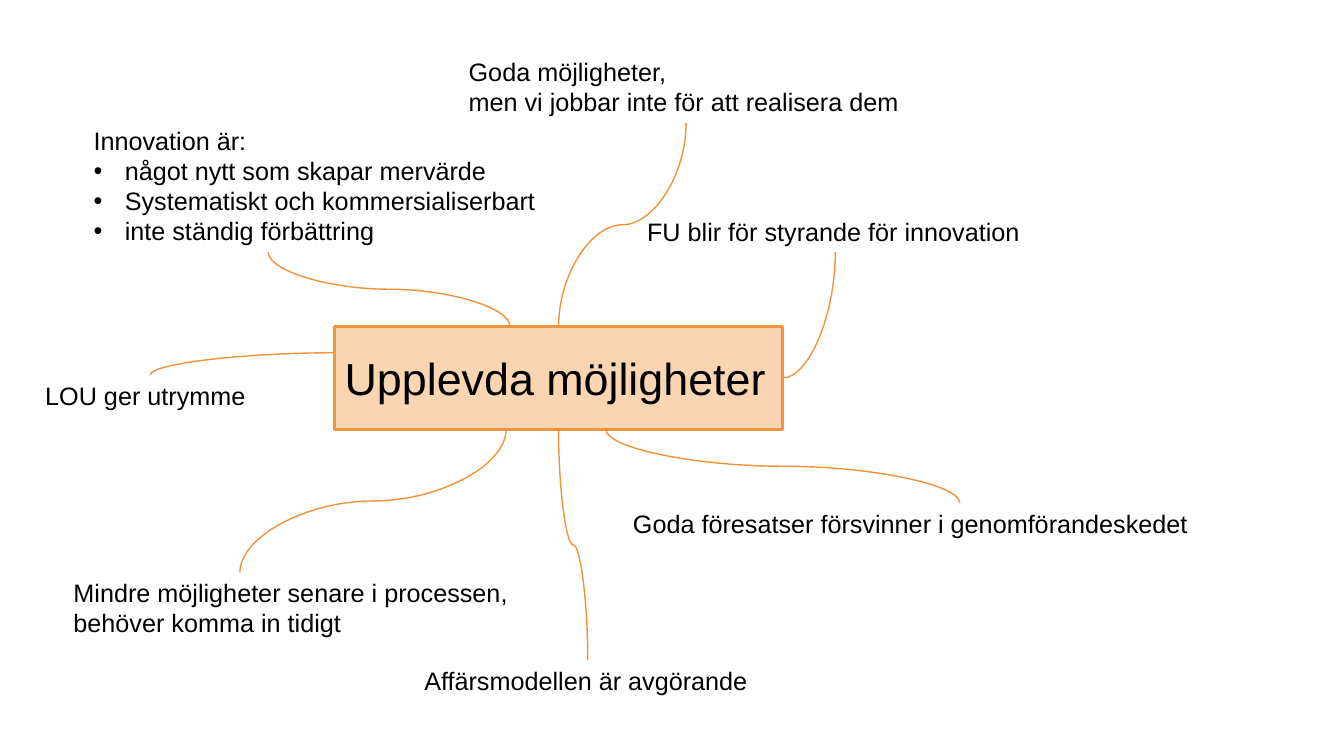
from dataclasses import dataclass

from pptx import Presentation
from pptx.dml.color import RGBColor
from pptx.enum import shapes, text
from pptx.oxml import ns, xmlchemy
from pptx.util import Inches, Pt


@dataclass(frozen=True)
class Theme:
    font: str = "Arial"
    ink: RGBColor = RGBColor(0x00, 0x00, 0x00)
    hub_fill: RGBColor = RGBColor(0xFA, 0xD5, 0xB2)
    hub_line: RGBColor = RGBColor(0xF3, 0x95, 0x3F)
    branch_line: RGBColor = RGBColor(0xF2, 0x92, 0x39)
    hub_size: Pt = Pt(32)
    label_size: Pt = Pt(18)
    hub_weight: Pt = Pt(2.25)
    branch_weight: Pt = Pt(1)


THEME = Theme()
BULLET = "• "
HUB_BOX = (3.32, 3.24, 4.44, 1.02)
HUB_LEFT, HUB_TOP, HUB_WIDTH, HUB_HEIGHT = HUB_BOX
HUB_RIGHT, HUB_BOTTOM = HUB_LEFT + HUB_WIDTH, HUB_TOP + HUB_HEIGHT
HUB_CENTER = HUB_LEFT + HUB_WIDTH / 2

# Each branch: label lines, label box, branch start x (None for label centre), point on the hub
BRANCHES = [
    (["Innovation är:", BULLET + "något nytt som skapar mervärde",
      BULLET + "Systematiskt och kommersialiserbart", BULLET + "inte ständig förbättring"],
     (0.83, 1.19, 4.63, 1.31), 2.66, (5.06, HUB_TOP)),
    (["Mindre möjligheter senare i processen,\vbehöver komma in tidigt"],
     (0.63, 5.68, 4.55, 0.71), 2.38, (5.02, HUB_BOTTOM)),
    (["Affärsmodellen är avgörande"], (4.11, 6.55, 3.44, 0.4), None, (HUB_CENTER, HUB_BOTTOM)),
    (["LOU ger utrymme"], (0.35, 3.72, 2.28, 0.4), None, (HUB_LEFT, 3.5)),
    (["Goda föresatser försvinner i genomförandeskedet"],
     (6.18, 4.99, 5.76, 0.4), 9.52, (6.01, HUB_BOTTOM)),
    (["FU blir för styrande för innovation"],
     (6.32, 2.1, 3.93, 0.4), None, (HUB_RIGHT, HUB_TOP + HUB_HEIGHT / 2)),
    (["Goda möjligheter,", "men vi jobbar inte för att realisera dem"],
     (4.55, 0.51, 4.51, 0.71), None, (HUB_CENTER, HUB_TOP)),
]


def style_paragraph(paragraph, size):
    paragraph.alignment = text.PP_ALIGN.LEFT
    paragraph.font.name = THEME.font
    paragraph.font.size = size
    paragraph.font.color.rgb = THEME.ink


def add_bullet(paragraph):
    properties = paragraph._p.get_or_add_pPr()
    properties.set("marL", str(Inches(0.31)))
    properties.set("indent", str(Inches(-0.31)))
    for tag, name, value in (("a:buFont", "typeface", THEME.font), ("a:buChar", "char", BULLET.strip())):
        element = xmlchemy.OxmlElement(tag)
        element.set(name, value)
        properties.append(element)


def add_hub(slide, box, title):
    hub = slide.shapes.add_shape(shapes.MSO_SHAPE.RECTANGLE, *map(Inches, box))
    hub.shadow.inherit = False
    hub.fill.solid()
    hub.fill.fore_color.rgb = THEME.hub_fill
    hub.line.color.rgb = THEME.hub_line
    hub.line.width = THEME.hub_weight
    frame = hub.text_frame
    frame.vertical_anchor = text.MSO_ANCHOR.MIDDLE
    frame.text = title
    style_paragraph(frame.paragraphs[0], THEME.hub_size)


def add_label(slide, box, lines):
    frame = slide.shapes.add_textbox(*map(Inches, box)).text_frame
    frame.word_wrap = False
    frame.auto_size = text.MSO_AUTO_SIZE.SHAPE_TO_FIT_TEXT
    frame.text = "\n".join(line.removeprefix(BULLET) for line in lines)
    for paragraph, line in zip(frame.paragraphs, lines):
        if line.startswith(BULLET):
            add_bullet(paragraph)
        style_paragraph(paragraph, THEME.label_size)


def add_curve(slide, start, end, preset):
    (start_x, start_y), (end_x, end_y) = start, end
    center_x, center_y = (start_x + end_x) / 2, (start_y + end_y) / 2
    half_x, half_y = (end_x - start_x) / 2, (end_y - start_y) / 2
    corners = (center_x - half_y, center_y + half_x, center_x + half_y, center_y - half_x)
    curve = slide.shapes.add_connector(shapes.MSO_CONNECTOR.CURVE, *map(Inches, corners))
    curve.line.color.rgb = THEME.branch_line
    curve.line.width = THEME.branch_weight
    properties = curve._element.spPr
    properties.find(ns.qn("a:xfrm")).set("rot", str(90 * 60000))
    properties.find(ns.qn("a:prstGeom")).set("prst", preset)
    properties.append(xmlchemy.OxmlElement("a:effectLst"))


def add_branch(slide, box, lines, start_x, hub_point):
    left, top, width, height = box
    add_label(slide, box, lines)
    if start_x is None:
        start_x = left + width / 2
    start_y = top + height if top < hub_point[1] - height else top
    meets_side = hub_point[0] in (HUB_LEFT, HUB_RIGHT)
    preset = "curvedConnector2" if meets_side else "curvedConnector3"
    add_curve(slide, (start_x, start_y), hub_point, preset)


def main():
    presentation = Presentation()
    presentation.slide_width, presentation.slide_height = Inches(13.33), Inches(7.5)
    slide = presentation.slides.add_slide(presentation.slide_layouts[6])
    add_hub(slide, HUB_BOX, "Upplevda möjligheter")
    for lines, box, start_x, hub_point in BRANCHES:
        add_branch(slide, box, lines, start_x, hub_point)
    presentation.save("out.pptx")


if __name__ == "__main__":
    main()
